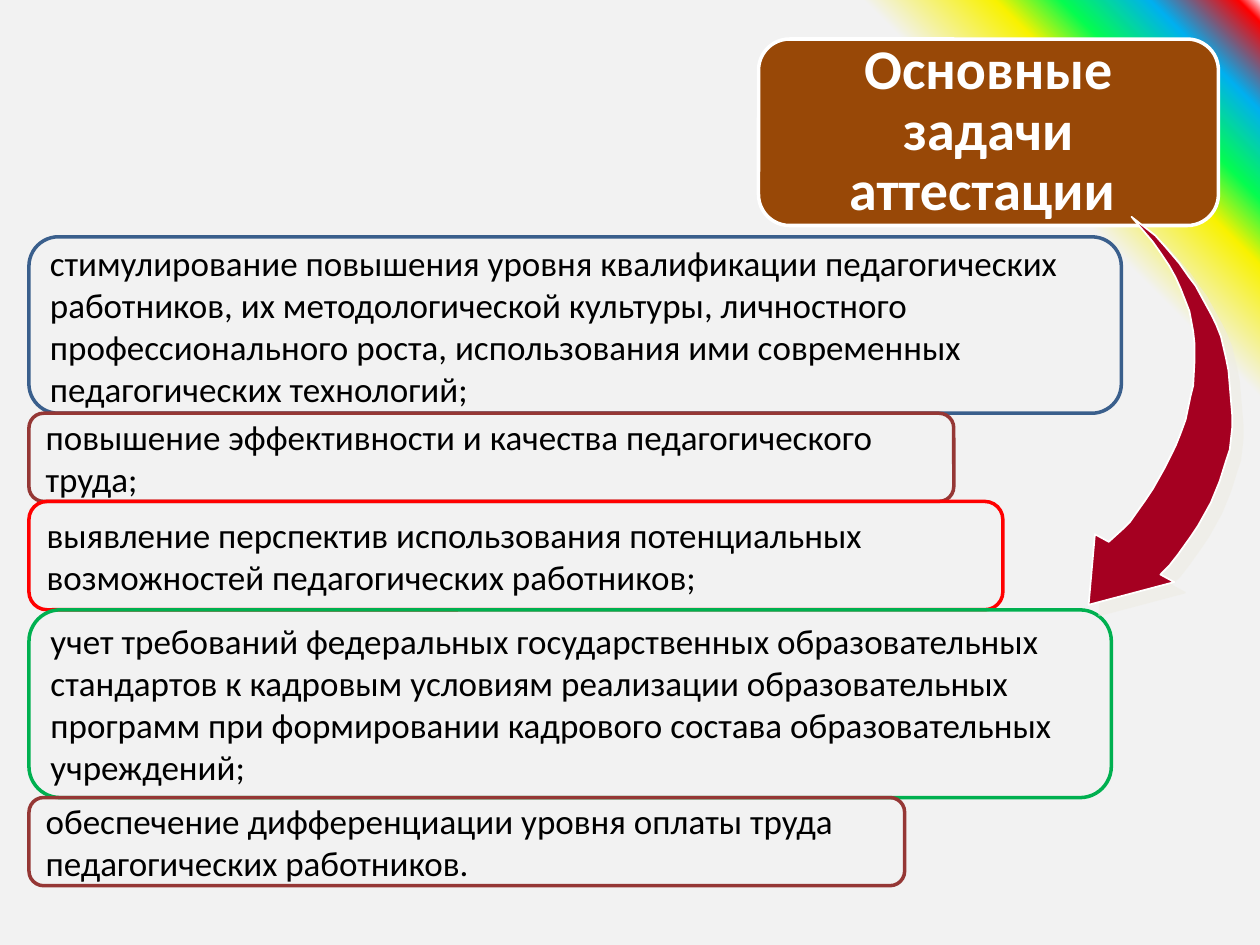
from dataclasses import dataclass
from itertools import accumulate

from lxml import etree
from pptx import Presentation
from pptx import util as u
from pptx.dml.color import RGBColor
from pptx.enum import shapes, text
from pptx.oxml import ns


@dataclass(frozen=True)
class Theme:
    font: str = "Calibri"
    title_size: int = 32
    task_size: int = 20
    outline: float = 2
    white: str = "FFFFFF"
    ink: str = "000000"
    brown: str = "984807"
    blue: str = "3A5F8C"
    maroon: str = "953735"
    red: str = "FF0000"
    green: str = "00B050"
    arrow: str = "A50021"
    shade: str = "EEECE1"


THEME = Theme()
WIDTH, HEIGHT = 10, 7.5
HEADING = "Основные задачи аттестации "
HEADING_BOX = (6.02, 0.31, 3.65, 1.48)
HEADING_INSET = 0.07
TASKS_LEFT, TASKS_TOP = 0.23, 1.88
TASKS = [
    ("стимулирование повышения уровня квалификации педагогических работников, "
     "их методологической культуры, личностного профессионального роста, "
     "использования ими современных педагогических технологий;", 8.67, 1.4, THEME.blue),
    ("повышение эффективности и качества педагогического труда;", 7.34, 0.7, THEME.maroon),
    ("выявление перспектив использования потенциальных возможностей "
     "педагогических работников;", 7.73, 0.86, THEME.red),
    ("учет требований федеральных государственных образовательных стандартов "
     "к кадровым условиям реализации образовательных программ при формировании "
     "кадрового состава образовательных учреждений;", 8.59, 1.49, THEME.green),
    ("обеспечение дифференциации уровня оплаты труда педагогических работников.",
     6.95, 0.7, THEME.maroon),
]
RAINBOW = [(82, "F2F2F2"), (88, "F8F200"), (91, "04FC51"),
           (95, "00B0F0"), (99, "FF0000"), (100, "FEE7F2")]
ARROW_UNIT = 0.01
ARROW_HEAD = [(880, 430), (869, 424), (864, 480), (932, 462), (921, 456)]
ARROW_OUTER = [
    (928, 449), (935, 440), (945, 426), (951, 417), (956, 408), (961, 399),
    (968, 382), (973, 366), (976, 357), (978, 339), (978, 330), (977, 318),
    (975, 294), (973, 284), (969, 267), (965, 257), (961, 249), (955, 238),
    (949, 227), (943, 219), (936, 209), (925, 196), (917, 187), (898, 172)]
ARROW_INNER = [
    (915, 192), (922, 202), (928, 211), (933, 220), (937, 229), (944, 247),
    (947, 263), (948, 272), (948, 288), (947, 306), (945, 314), (941, 333),
    (937, 344), (933, 354), (924, 372), (915, 388), (909, 397), (904, 404),
    (897, 414), (891, 420)]


def assign(target, values):
    for name, value in values.items():
        setattr(target, name, value)


def inches(values):
    return [u.Inches(value) for value in values]


def paint(shape, fill, line, weight):
    shape.shadow.inherit = False
    if fill:
        shape.fill.solid()
        shape.fill.fore_color.rgb = RGBColor.from_string(fill)
    else:
        shape.fill.background()
    shape.line.color.rgb = RGBColor.from_string(line)
    shape.line.width = u.Pt(weight)


def write(shape, wording, size, color, align, bold=False, spacing=1.0, **frame_values):
    frame = shape.text_frame
    frame.text = wording
    assign(frame, {"word_wrap": True, "auto_size": text.MSO_AUTO_SIZE.NONE,
                   "vertical_anchor": text.MSO_ANCHOR.MIDDLE, **frame_values})
    paragraph = frame.paragraphs[0]
    assign(paragraph, {"alignment": align, "line_spacing": spacing})
    font = paragraph.runs[0].font
    assign(font, {"name": THEME.font, "size": u.Pt(size), "bold": bold})
    font.color.rgb = RGBColor.from_string(color)


def add_rounded(slide, box, fill, line):
    rounded = slide.shapes.add_shape(shapes.MSO_SHAPE.ROUNDED_RECTANGLE, *inches(box))
    paint(rounded, fill, line, THEME.outline)
    return rounded


def add_background(slide):
    slide.background.fill.solid()
    properties = slide.element.find(".//" + ns.qn("p:bgPr"))
    stops = "".join(f'<a:gs pos="{share * 1000}"><a:srgbClr val="{color}"/></a:gs>'
                    for share, color in RAINBOW)
    rainbow = etree.fromstring(
        f'<a:gradFill {ns.nsdecls("a")} rotWithShape="1"><a:gsLst>{stops}</a:gsLst>'
        '<a:path path="circle"><a:fillToRect t="100000" r="100000"/></a:path></a:gradFill>')
    properties.replace(properties[0], rainbow)


def add_heading(slide):
    add_rounded(slide, HEADING_BOX, THEME.brown, THEME.white)
    left, top, width, height = HEADING_BOX
    title = slide.shapes.title
    slide.shapes.element.append(title.element)
    box = (left + HEADING_INSET, top + HEADING_INSET,
           width - 2 * HEADING_INSET, height - 2 * HEADING_INSET)
    assign(title, dict(zip(("left", "top", "width", "height"), inches(box))))
    side, edge = inches((0.12, 0.06))
    write(title, HEADING, THEME.title_size, THEME.white, text.PP_ALIGN.CENTER,
          bold=True, spacing=0.9, margin_left=side, margin_right=side,
          margin_top=edge, margin_bottom=edge)


def add_tasks(slide):
    tops = accumulate((height for _, _, height, _ in TASKS), initial=TASKS_TOP)
    for (wording, width, height, color), top in zip(TASKS, tops):
        task = add_rounded(slide, (TASKS_LEFT, top, width, height), None, color)
        write(task, wording, THEME.task_size, THEME.ink, text.PP_ALIGN.LEFT)


def add_arrow(slide):
    start, *rest = ARROW_HEAD + ARROW_OUTER + ARROW_INNER
    builder = slide.shapes.build_freeform(*start, scale=u.Inches(ARROW_UNIT))
    builder.add_line_segments(rest, close=True)
    arrow = builder.convert_to_shape()
    paint(arrow, THEME.arrow, THEME.white, 1)
    effects = arrow.element.spPr.find(ns.qn("a:effectLst"))
    effects.append(etree.fromstring(
        f'<a:outerShdw {ns.nsdecls("a")} blurRad="0" dist="{u.Pt(8.5)}" dir="{45 * 60000}">'
        f'<a:srgbClr val="{THEME.shade}"><a:alpha val="50000"/></a:srgbClr></a:outerShdw>'))


def main():
    deck = Presentation()
    assign(deck, {"slide_width": u.Inches(WIDTH), "slide_height": u.Inches(HEIGHT)})
    slide = deck.slides.add_slide(deck.slide_layouts.get_by_name("Title Only"))
    add_background(slide)
    add_heading(slide)
    add_tasks(slide)
    add_arrow(slide)
    deck.save("out.pptx")


if __name__ == "__main__":
    main()
